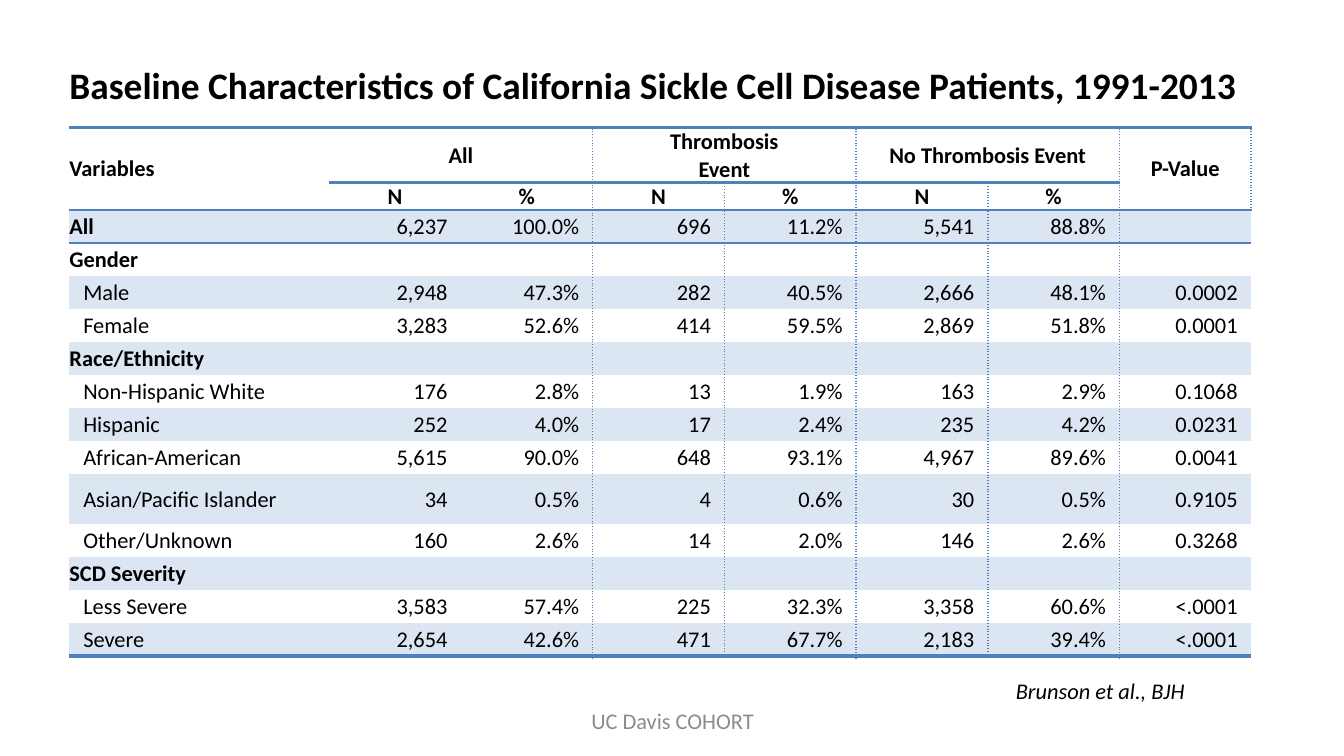
from dataclasses import dataclass

from pptx import Presentation
from pptx.dml.color import RGBColor
from pptx.enum import text
from pptx.oxml import parse_xml
from pptx.oxml.ns import nsdecls
from pptx.util import Inches, Pt


@dataclass(frozen=True)
class Theme:
    font: str = "Calibri"
    ink: str = "000000"
    muted: str = "8C8C8C"
    rule: str = "4F81BD"
    band: str = "DCE6F2"
    title_size: int = 20
    body_size: int = 12
    heavy: float = 2.25
    medium: float = 1.5
    thin: float = 1


THEME = Theme()
WIDTH = 10
HEIGHT = WIDTH * 9 / 16
LEFT, RIGHT, CENTER = text.PP_ALIGN.LEFT, text.PP_ALIGN.RIGHT, text.PP_ALIGN.CENTER
NO_GRID_STYLE = "{2D5ABB26-0587-4C30-8999-92F81FD0307C}"

TITLE = "Baseline Characteristics of California Sickle Cell Disease Patients, 1991-2013"
GROUPS = ["All", "Thrombosis\nEvent", "No Thrombosis Event"]
BODY = [
    ("All", "6,237", "100.0%", "696", "11.2%", "5,541", "88.8%", ""),
    ("Gender",),
    ("Male", "2,948", "47.3%", "282", "40.5%", "2,666", "48.1%", "0.0002"),
    ("Female", "3,283", "52.6%", "414", "59.5%", "2,869", "51.8%", "0.0001"),
    ("Race/Ethnicity",),
    ("Non-Hispanic White", "176", "2.8%", "13", "1.9%", "163", "2.9%", "0.1068"),
    ("Hispanic", "252", "4.0%", "17", "2.4%", "235", "4.2%", "0.0231"),
    ("African-American", "5,615", "90.0%", "648", "93.1%", "4,967", "89.6%", "0.0041"),
    ("Asian/Pacific Islander", "34", "0.5%", "4", "0.6%", "30", "0.5%", "0.9105"),
    ("Other/Unknown", "160", "2.6%", "14", "2.0%", "146", "2.6%", "0.3268"),
    ("SCD Severity",),
    ("Less Severe", "3,583", "57.4%", "225", "32.3%", "3,358", "60.6%", "<.0001"),
    ("Severe", "2,654", "42.6%", "471", "67.7%", "2,183", "39.4%", "<.0001"),
]

HEADER_ROWS = 3
ROWS, COLS = HEADER_ROWS + len(BODY), 8
GROUP_COLS = range(1, COLS - 1, 2)
TABLE_LEFT, TABLE_TOP, TABLE_WIDTH, TABLE_HEIGHT = 0.51, 0.33, 8.8, 4.53
LABEL_WIDTH = 1.94
SPECIAL_HEIGHTS = {0: 0.62, 1: 0.39, 2: 0.2, 11: 0.37}
INSET, INDENT, VALUE_INSET = Pt(0.5), Inches(0.11), Inches(0.1)
H_RULES = {1: THEME.heavy, HEADER_ROWS: THEME.medium, ROWS: THEME.heavy}
V_RULES = {col + 2 for col in GROUP_COLS}


def style_runs(tf, size, color=THEME.ink, align=LEFT, bold=False, italic=False):
    for p in tf.paragraphs:
        p.alignment = align
        for r in p.runs:
            r.font.name = THEME.font
            r.font.size = Pt(size)
            r.font.bold = bold
            r.font.italic = italic
            r.font.color.rgb = RGBColor.from_string(color)
        if not p.runs:
            p._p.get_or_add_endParaRPr().set("sz", str(size * 100))


def add_label(slide, content, x, y, w, h, wrap=True, **style):
    box = slide.shapes.add_textbox(Inches(x), Inches(y), Inches(w), Inches(h))
    tf = box.text_frame
    tf.text = content
    tf.word_wrap = wrap
    if wrap:
        tf.vertical_anchor = text.MSO_ANCHOR.MIDDLE
    else:
        tf.auto_size = text.MSO_AUTO_SIZE.SHAPE_TO_FIT_TEXT
    style_runs(tf, THEME.body_size, **style)


def write_cell(cell, content, size=THEME.body_size, **style):
    cell.text = content
    style_runs(cell.text_frame, size, **style)


def horizontal_rule(edge):
    return (H_RULES[edge], "solid") if edge in H_RULES else None


def vertical_rule(edge, row):
    return (THEME.thin, "sysDot") if edge in V_RULES and row else None


def add_borders(cell, row, col):
    borders = {
        "lnL": vertical_rule(col, row),
        "lnR": vertical_rule(col + cell.span_width, row),
        "lnT": horizontal_rule(row),
        "lnB": horizontal_rule(row + cell.span_height),
    }
    tcPr = cell._tc.get_or_add_tcPr()
    for tag, rule in borders.items():
        if rule:
            width, dash = rule
            tcPr.append(parse_xml(
                f'<a:{tag} {nsdecls("a")} w="{Pt(width)}"><a:solidFill>'
                f'<a:srgbClr val="{THEME.rule}"/></a:solidFill>'
                f'<a:prstDash val="{dash}"/></a:{tag}>'
            ))


def format_cell(cell, row, col):
    cell.margin_left = cell.margin_right = cell.margin_top = INSET
    cell.margin_bottom = 0
    cell.vertical_anchor = text.MSO_ANCHOR.MIDDLE
    style_runs(cell.text_frame, THEME.body_size)
    if not cell.is_spanned:
        add_borders(cell, row, col)
    if row >= HEADER_ROWS and (row - HEADER_ROWS) % 2 == 0:
        cell.fill.solid()
        cell.fill.fore_color.rgb = RGBColor.from_string(THEME.band)
    else:
        cell.fill.background()


def size_grid(table):
    value_width = (TABLE_WIDTH - LABEL_WIDTH) / (COLS - 1)
    for i, column in enumerate(table.columns):
        column.width = Inches(value_width if i else LABEL_WIDTH)
    spare = TABLE_HEIGHT - sum(SPECIAL_HEIGHTS.values())
    body_height = spare / (ROWS - len(SPECIAL_HEIGHTS))
    for i, row in enumerate(table.rows):
        row.height = Inches(SPECIAL_HEIGHTS.get(i, body_height))


def merge_header(table):
    table.cell(0, 0).merge(table.cell(0, COLS - 1))
    for col in (0, COLS - 1):
        table.cell(1, col).merge(table.cell(2, col))
    for col in GROUP_COLS:
        table.cell(1, col).merge(table.cell(1, col + 1))


def fill_header(table):
    write_cell(table.cell(0, 0), TITLE, size=THEME.title_size, bold=True)
    write_cell(table.cell(1, 0), "Variables", bold=True)
    write_cell(table.cell(1, COLS - 1), "P-Value", align=CENTER, bold=True)
    for col, name in zip(GROUP_COLS, GROUPS):
        write_cell(table.cell(1, col), name, align=CENTER, bold=True)
        for offset, unit in enumerate("N%"):
            write_cell(table.cell(2, col + offset), unit, align=CENTER, bold=True)


def fill_body(table):
    for row, (name, *values) in enumerate(BODY, HEADER_ROWS):
        heading = name == "All" or not values
        label = table.cell(row, 0)
        write_cell(label, name, bold=heading)
        label.margin_left = INSET if heading else INDENT
        for col, value in enumerate(values, 1):
            cell = table.cell(row, col)
            write_cell(cell, value, align=RIGHT)
            cell.margin_right = VALUE_INSET


def add_patient_table(slide):
    frame = slide.shapes.add_table(
        ROWS, COLS, Inches(TABLE_LEFT), Inches(TABLE_TOP),
        Inches(TABLE_WIDTH), Inches(TABLE_HEIGHT)
    )
    table = frame.table
    table.first_row = table.horz_banding = False
    table._tbl.tblPr.find("{*}tableStyleId").text = NO_GRID_STYLE
    size_grid(table)
    merge_header(table)
    for row in range(ROWS):
        for col in range(COLS):
            format_cell(table.cell(row, col), row, col)
    fill_header(table)
    fill_body(table)


def main():
    prs = Presentation()
    prs.slide_width, prs.slide_height = Inches(WIDTH), Inches(HEIGHT)
    slide = prs.slides.add_slide(prs.slide_layouts.get_by_name("Blank"))
    add_label(slide, "UC Davis COHORT", 3.42, 5.21, 3.17, 0.3,
              color=THEME.muted, align=CENTER)
    add_label(slide, "Brunson et al., BJH", 7.46, 4.99, 1.51, 0.3,
              wrap=False, italic=True)
    add_patient_table(slide)
    prs.save("out.pptx")


if __name__ == "__main__":
    main()
